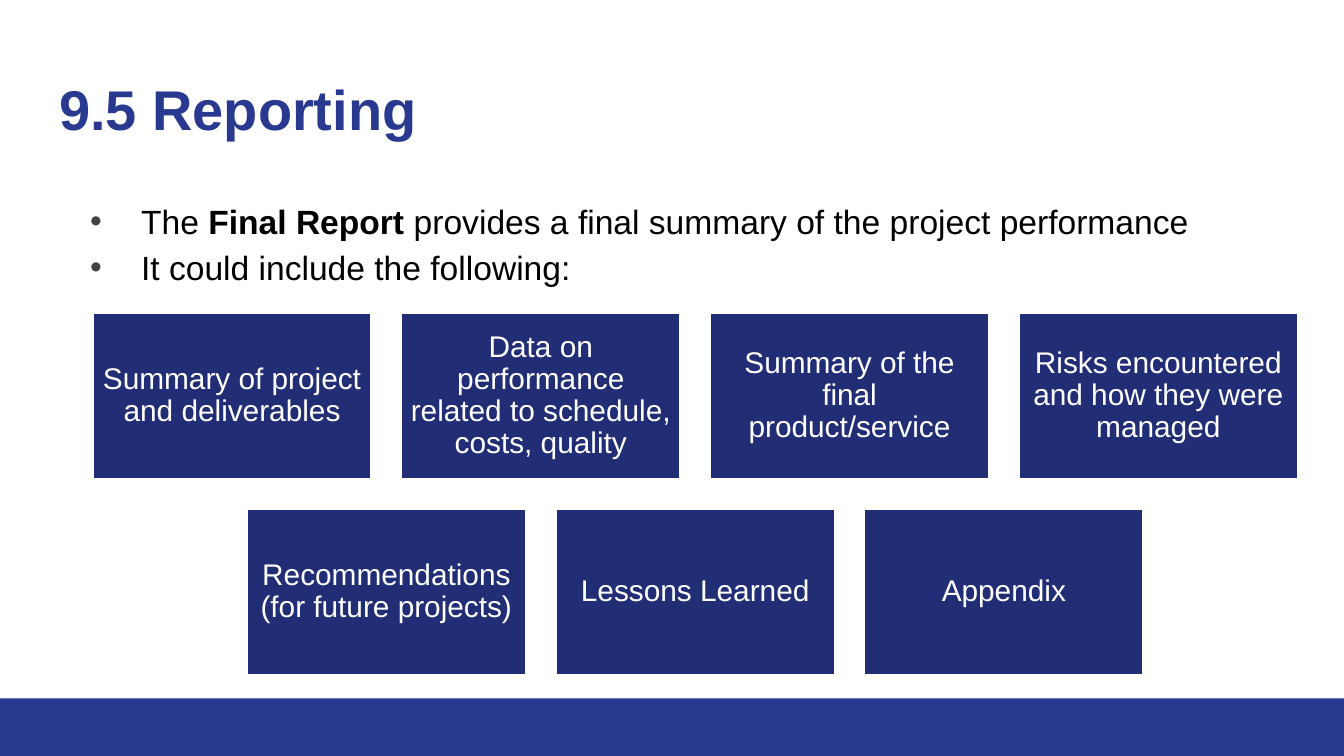
import dataclasses

import lxml.etree
import pptx
import pptx.dml.color
import pptx.enum.shapes
import pptx.enum.text
import pptx.oxml.ns
import pptx.util


@dataclasses.dataclass(frozen=True)
class Theme:
    """Colours, font and type sizes of the slide."""
    font: str = "Arial"
    brand: str = "2A3990"
    tile: str = "212D74"
    light: str = "FFFFFF"
    text: str = "000000"
    bullet: str = "434343"
    title_size: int = 30
    body_size: int = 18
    tile_size: int = 16


@dataclasses.dataclass(frozen=True)
class Box:
    """A rectangle in inches."""
    left: float
    top: float
    width: float
    height: float

    def emu(self):
        """Return the four lengths for python-pptx."""
        return [pptx.util.Inches(length) for length in dataclasses.astuple(self)]


THEME = Theme()
PAGE = Box(0, 0, 10, 10 * 9 / 16)
BULLETS = [
    [("The ", False), ("Final Report ", True),
     ("provides a final summary of the project performance", False)],
    [("It could include the following:", False)],
]
REPORT_PARTS = [
    ["Summary of project and deliverables",
     "Data on performance related to schedule, costs, quality",
     "Summary of the final product/service",
     "Risks encountered and how they were managed"],
    ["Recommendations (for future projects)", "Lessons Learned", "Appendix"],
]


def share(left, top, width, height):
    """Return a box given as percentages of the page."""
    return Box(PAGE.width * left / 100, PAGE.height * top / 100,
               PAGE.width * width / 100, PAGE.height * height / 100)


def colour(value):
    """Return an RGB colour from its hexadecimal text."""
    return pptx.dml.color.RGBColor.from_string(value)


def style_font(font, size, value, bold=None):
    """Apply the theme font with a size, colour and weight."""
    font.name = THEME.font
    font.size = pptx.util.Pt(size)
    font.color.rgb = colour(value)
    font.bold = bold


def set_frame(frame, inset, anchor):
    """Set the insets, wrapping and anchor of a text frame."""
    frame.margin_left = frame.margin_right = pptx.util.Inches(inset)
    frame.margin_top = frame.margin_bottom = pptx.util.Inches(inset)
    frame.word_wrap = True
    frame.auto_size = pptx.enum.text.MSO_AUTO_SIZE.NONE
    frame.vertical_anchor = anchor


def place(shape, box):
    """Move a placeholder to a box."""
    shape.left, shape.top, shape.width, shape.height = box.emu()


def add_rectangle(slide, box, fill):
    """Add a plain filled rectangle without a line or shadow."""
    shape = slide.shapes.add_shape(pptx.enum.shapes.MSO_SHAPE.RECTANGLE, *box.emu())
    shape.shadow.inherit = False
    shape.fill.solid()
    shape.fill.fore_color.rgb = colour(fill)
    shape.line.fill.background()
    return shape


def fill_title(title, box, text):
    """Write the slide title in its placeholder."""
    place(title, box)
    set_frame(title.text_frame, 0.1, pptx.enum.text.MSO_ANCHOR.TOP)
    title.text_frame.text = text
    paragraph = title.text_frame.paragraphs[0]
    paragraph.alignment = pptx.enum.text.PP_ALIGN.LEFT
    style_font(paragraph.font, THEME.title_size, THEME.brand, True)


def add_bullet(paragraph):
    """Give a paragraph a hanging coloured bullet."""
    properties = paragraph._p.get_or_add_pPr()
    properties.set("marL", str(pptx.util.Inches(0.5)))
    properties.set("indent", str(pptx.util.Inches(-0.38)))
    name = pptx.oxml.ns.qn
    bullet_colour = lxml.etree.SubElement(properties, name("a:buClr"))
    lxml.etree.SubElement(bullet_colour, name("a:srgbClr"), val=THEME.bullet)
    lxml.etree.SubElement(properties, name("a:buChar"), char="•")


def fill_body(body, box, bullets):
    """Write the bulleted list in the body placeholder."""
    place(body, box)
    frame = body.text_frame
    set_frame(frame, 0.1, pptx.enum.text.MSO_ANCHOR.TOP)
    for index, runs in enumerate(bullets):
        paragraph = frame.add_paragraph() if index else frame.paragraphs[0]
        add_bullet(paragraph)
        paragraph.line_spacing = 1.15
        paragraph.space_before = pptx.util.Pt(0)
        style_font(paragraph.font, THEME.body_size, THEME.text)
        for text, bold in runs:
            run = paragraph.add_run()
            run.text = text
            run.font.bold = bold


def add_tile(slide, box, text):
    """Add one labelled tile."""
    tile = add_rectangle(slide, box, THEME.tile)
    tile.line.color.rgb = colour(THEME.light)
    tile.line.width = pptx.util.Pt(2)
    set_frame(tile.text_frame, 0.07, pptx.enum.text.MSO_ANCHOR.MIDDLE)
    tile.text_frame.text = text
    paragraph = tile.text_frame.paragraphs[0]
    paragraph.alignment = pptx.enum.text.PP_ALIGN.CENTER
    paragraph.line_spacing = 0.9
    style_font(paragraph.font, THEME.tile_size, THEME.light)


def add_tile_grid(slide, box, rows):
    """Lay out centred rows of tiles with equal gaps."""
    columns = max(len(row) for row in rows)
    gap_share = 0.1
    width = box.width / (columns + gap_share * (columns - 1))
    gap = width * gap_share
    height = (box.height - gap * (len(rows) - 1)) / len(rows)
    for row_index, row in enumerate(rows):
        indent = (columns - len(row)) * (width + gap) / 2
        top = box.top + row_index * (height + gap)
        for column, text in enumerate(row):
            left = box.left + indent + column * (width + gap)
            add_tile(slide, Box(left, top, width, height), text)


def build_slide(presentation):
    """Build the reporting slide."""
    slide = presentation.slides.add_slide(presentation.slide_layouts[1])
    add_rectangle(slide, share(0, 92.4, 100, 7.6), THEME.brand)
    fill_title(slide.shapes.title, share(3.4, 8.1, 93.2, 11.7), "9.5 Reporting")
    fill_body(slide.placeholders[1], share(4.5, 23.95, 88.7, 17.3), BULLETS)
    add_tile_grid(slide, share(6.83, 41.25, 89.8, 48.2), REPORT_PARTS)


def main():
    """Create and save the presentation."""
    presentation = pptx.Presentation()
    presentation.slide_width = pptx.util.Inches(PAGE.width)
    presentation.slide_height = pptx.util.Inches(PAGE.height)
    build_slide(presentation)
    presentation.save("out.pptx")


if __name__ == "__main__":
    main()
